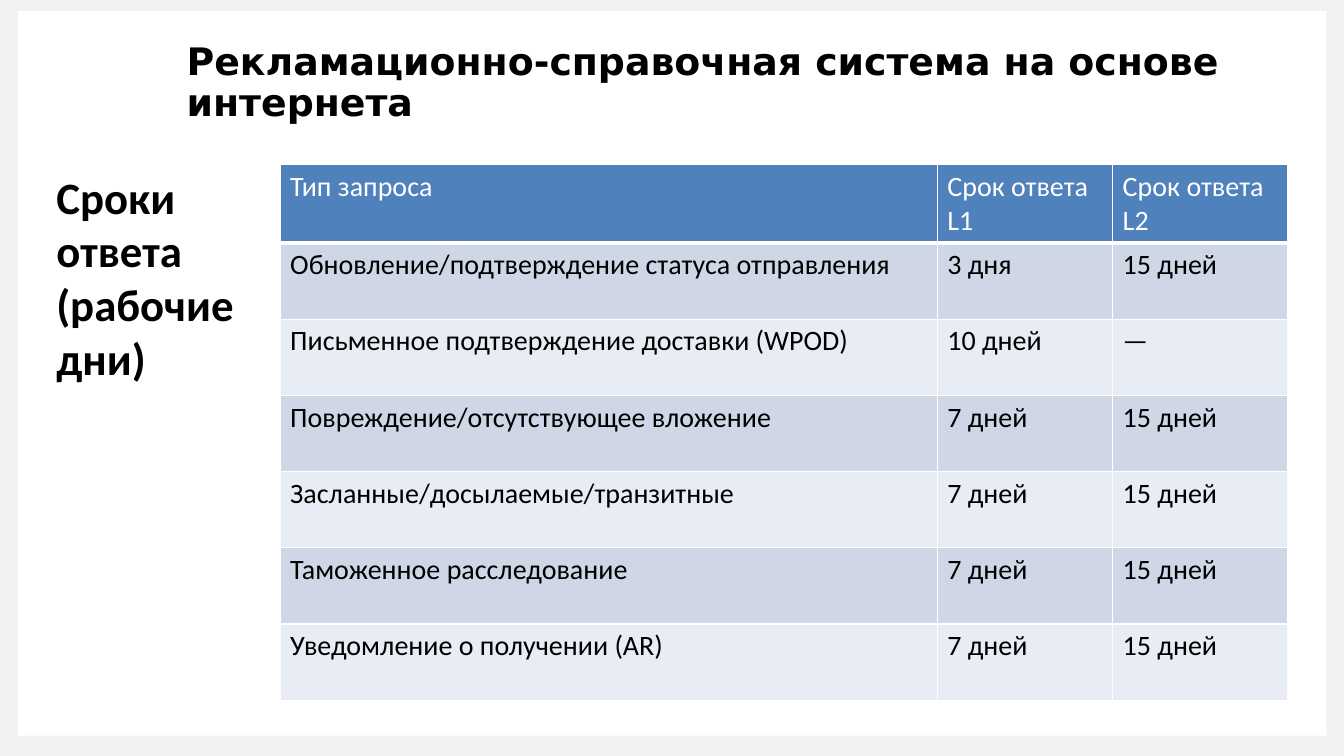
from dataclasses import dataclass

from lxml import etree
from pptx import Presentation
from pptx.dml.color import RGBColor
from pptx.enum.shapes import MSO_SHAPE
from pptx.enum.text import MSO_ANCHOR, MSO_AUTO_SIZE, PP_ALIGN
from pptx.oxml.ns import qn
from pptx.util import Cm, Pt

RECTANGLE = MSO_SHAPE.RECTANGLE
MIDDLE = MSO_ANCHOR.MIDDLE
NO_AUTOFIT = MSO_AUTO_SIZE.NONE
GROW_SHAPE = MSO_AUTO_SIZE.SHAPE_TO_FIT_TEXT
LEFT = PP_ALIGN.LEFT
TITLE_ONLY = 5
EMU_PER_POINT = 12700


@dataclass(frozen=True)
class Theme:
    frame: str = "F2F2F2"
    paper: str = "FFFFFF"
    ink: str = "000000"
    header: str = "4F81BD"
    bands: tuple = ("CFD7E7", "E8ECF4")
    title_font: str = "DejaVu Sans"
    body_font: str = "Calibri"
    title_size: int = 27
    label_size: int = 32
    table_size: int = 20


THEME = Theme()
SLIDE_WIDTH, SLIDE_HEIGHT = 33.87, 19.05
COLUMN_WIDTHS = (16.56, 4.42, 4.42)
ROW_HEIGHT = 1.92
RESPONSE_TIMES = (
    ("Тип запроса", "Срок ответа L1", "Срок ответа L2"),
    ("Обновление/подтверждение статуса отправления", "3 дня", "15 дней"),
    ("Письменное подтверждение доставки (WPOD)", "10 дней", "—"),
    ("Повреждение/отсутствующее вложение", "7 дней", "15 дней"),
    ("Засланные/досылаемые/транзитные", "7 дней", "15 дней"),
    ("Таможенное расследование", "7 дней", "15 дней"),
    ("Уведомление о получении (AR)", "7 дней", "15 дней"),
)


def set_attributes(target, values):
    for name, value in values.items():
        setattr(target, name, value)


def format_font(font, name, size, color, bold=False):
    set_attributes(font, {"name": name, "size": Pt(size), "bold": bold})
    font.color.rgb = RGBColor.from_string(color)


def add_panel(slide, left, top, width, height, color):
    """Add a plain rectangle behind the title."""
    panel = slide.shapes.add_shape(RECTANGLE, Cm(left), Cm(top), Cm(width), Cm(height))
    panel.shadow.inherit = False
    panel.fill.solid()
    panel.fill.fore_color.rgb = RGBColor.from_string(color)
    panel.line.fill.background()
    slide.shapes.title.element.addprevious(panel.element)


def fill_title(slide, text, left, top, width, height):
    title = slide.shapes.title
    set_attributes(title, {"left": Cm(left), "top": Cm(top),
                           "width": Cm(width), "height": Cm(height)})
    frame = title.text_frame
    set_attributes(frame, {"text": text, "word_wrap": True, "auto_size": NO_AUTOFIT,
                           "vertical_anchor": MIDDLE})
    paragraph = frame.paragraphs[0]
    set_attributes(paragraph, {"alignment": LEFT, "line_spacing": 0.9})
    format_font(paragraph.font, THEME.title_font, THEME.title_size, THEME.ink, True)


def add_label(slide, lines, left, top, width, height):
    box = slide.shapes.add_textbox(Cm(left), Cm(top), Cm(width), Cm(height))
    frame = box.text_frame
    set_attributes(frame, {"text": "\n".join(lines), "word_wrap": True,
                           "auto_size": GROW_SHAPE})
    for paragraph in frame.paragraphs:
        format_font(paragraph.font, THEME.body_font, THEME.label_size, THEME.ink, True)


def add_borders(cell, widths):
    properties = cell._tc.get_or_add_tcPr()
    for side, points in widths.items():
        line = etree.SubElement(properties, qn(f"a:ln{side}"), w=str(points * EMU_PER_POINT))
        fill = etree.SubElement(line, qn("a:solidFill"))
        etree.SubElement(fill, qn("a:srgbClr"), val=THEME.paper)


def format_cell(cell, text, row):
    is_header = row == 0
    # Borders come before the fill in the cell properties
    add_borders(cell, {"L": 1, "R": 1, "T": 3 if row == 1 else 1, "B": 3 if is_header else 1})
    cell.fill.solid()
    background = THEME.header if is_header else THEME.bands[(row - 1) % 2]
    cell.fill.fore_color.rgb = RGBColor.from_string(background)
    cell.text = text
    format_font(cell.text_frame.paragraphs[0].font, THEME.body_font, THEME.table_size,
                THEME.paper if is_header else THEME.ink)


def add_response_table(slide, rows, left, top):
    table = slide.shapes.add_table(
        len(rows), len(COLUMN_WIDTHS), Cm(left), Cm(top),
        Cm(sum(COLUMN_WIDTHS)), Cm(ROW_HEIGHT * len(rows))).table
    for column, width in zip(table.columns, COLUMN_WIDTHS):
        column.width = Cm(width)
    for row_index, texts in enumerate(rows):
        table.rows[row_index].height = Cm(ROW_HEIGHT)
        for column_index, text in enumerate(texts):
            format_cell(table.cell(row_index, column_index), text, row_index)


def main():
    presentation = Presentation()
    set_attributes(presentation, {"slide_width": Cm(SLIDE_WIDTH),
                                  "slide_height": Cm(SLIDE_HEIGHT)})
    slide = presentation.slides.add_slide(presentation.slide_layouts[TITLE_ONLY])

    # Grey frame around the white page
    add_panel(slide, 0, 0, SLIDE_WIDTH, SLIDE_HEIGHT, THEME.frame)
    add_panel(slide, 0.46, 0.28, 32.97, 18.26, THEME.paper)

    # Title, table and side label
    fill_title(slide, "Рекламационно-справочная система на основе интернета",
               4.45, 1.32, 28.27, 1.6)
    add_response_table(slide, RESPONSE_TIMES, 7.06, 4.14)
    add_label(slide, ("Сроки ответа", "(рабочие дни)"), 1.17, 4.14, 5.21, 5.74)

    presentation.save("out.pptx")


if __name__ == "__main__":
    main()
